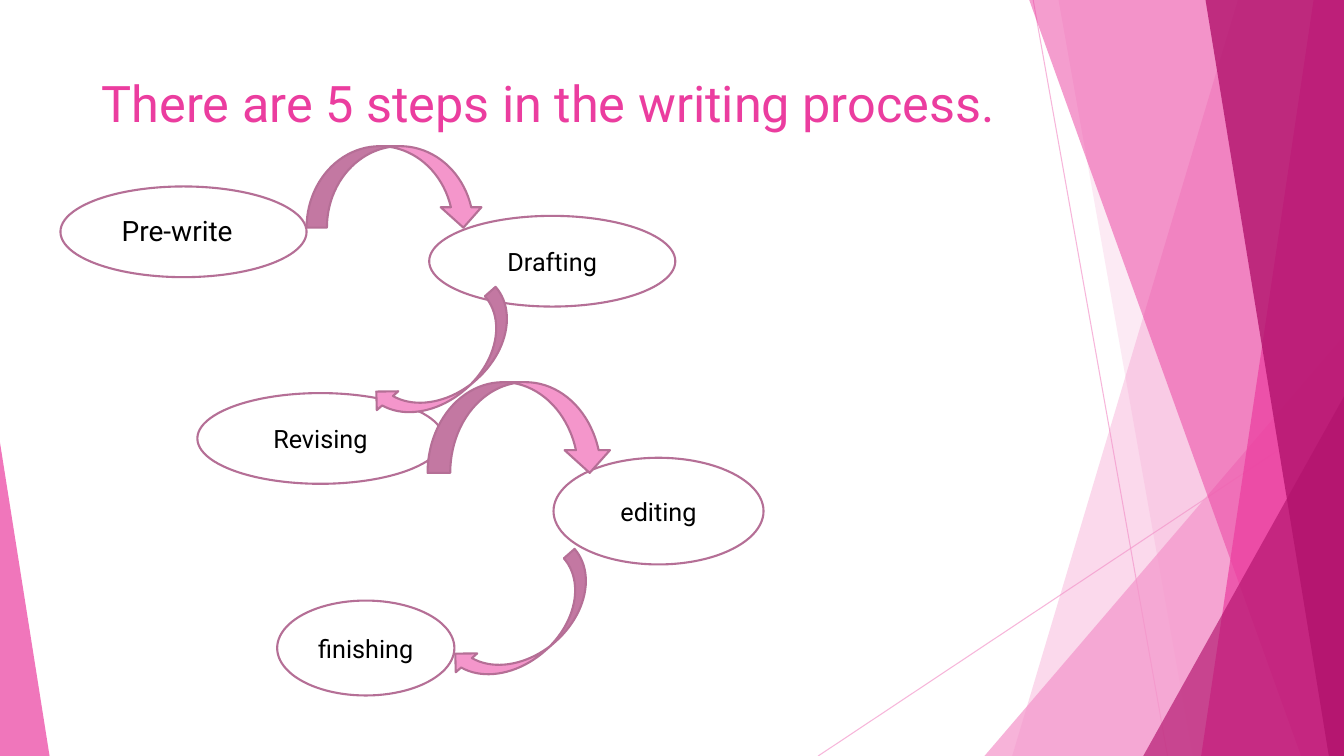
from lxml import etree
from pptx import Presentation
from pptx.dml.color import RGBColor
from pptx.enum.shapes import MSO_CONNECTOR, MSO_SHAPE
from pptx.enum.text import MSO_ANCHOR, PP_ALIGN
from pptx.oxml.ns import qn
from pptx.util import Inches, Pt

COLS, ROWS = 160, 90
CELL = Inches(1) // 12

LIGHT = RGBColor(0xF4, 0x96, 0xCB)
PINK = RGBColor(0xEB, 0x3D, 0x9F)
DARK = RGBColor(0xB2, 0x13, 0x6D)
EDGE = RGBColor(0xB5, 0x6F, 0x96)
WHITE = RGBColor(0xFF, 0xFF, 0xFF)
BLACK = RGBColor(0, 0, 0)

FONT = "Roboto"
OVAL = MSO_SHAPE.OVAL
ARROW = MSO_SHAPE.CURVED_DOWN_ARROW
WEDGE = MSO_SHAPE.ISOSCELES_TRIANGLE
STRAIGHT = MSO_CONNECTOR.STRAIGHT
CENTER, LEFT = PP_ALIGN.CENTER, PP_ALIGN.LEFT
MIDDLE, TOP = MSO_ANCHOR.MIDDLE, MSO_ANCHOR.TOP


def grid(*cells):
    """Turn columns and rows into slide lengths."""
    return [round(cell * CELL) for cell in cells]


def fade(shape, share):
    """Set the opacity, in percent, of the shape's colour."""
    for color in shape._element.spPr.iter(qn("a:srgbClr")):
        etree.SubElement(color, qn("a:alpha"), val=str(share * 1000))


def tint(shape, color, share):
    """Give a backdrop piece a see-through fill and no line."""
    shape.shadow.inherit = False
    shape.fill.solid()
    shape.fill.fore_color.rgb = color
    shape.line.fill.background()
    fade(shape, share)


def add_ray(slide, *ends):
    ray = slide.shapes.add_connector(STRAIGHT, *grid(*ends))
    ray.line.color.rgb = LIGHT
    ray.line.width = Pt(0.75)
    fade(ray, 70)
    etree.SubElement(ray._element.spPr, qn("a:effectLst"))


def add_band(slide, top, foot, color, share):
    """Fill from a slanted edge to the right side of the slide."""
    pen = slide.shapes.build_freeform(*grid(top, -0.1), scale=1.0)
    corners = [(COLS, -0.1), (COLS, ROWS), (foot, ROWS)]
    pen.add_line_segments([grid(*spot) for spot in corners], close=True)
    tint(pen.convert_to_shape(), color, share)


def add_wedge(slide, left, top, width, peak, color, share):
    """Stand a triangle on the foot of the slide."""
    wedge = slide.shapes.add_shape(WEDGE, *grid(left, top, width, ROWS - top))
    wedge.adjustments[0] = peak
    tint(wedge, color, share)


def write(shape, text, size, color, align, anchor):
    frame = shape.text_frame
    frame.text = text
    frame.word_wrap = True
    frame.vertical_anchor = anchor
    line = frame.paragraphs[0]
    line.alignment = align
    font = line.runs[0].font
    font.name, font.size = FONT, Pt(size)
    font.color.rgb = color


def add_text(slide, box, text, size, color, align):
    write(slide.shapes.add_textbox(*grid(*box)), text, size, color, align, TOP)


def add_part(slide, kind, box, color):
    part = slide.shapes.add_shape(kind, *grid(*box))
    part.shadow.inherit = False
    part.fill.solid()
    part.fill.fore_color.rgb = color
    part.line.color.rgb = EDGE
    part.line.width = Pt(1.5)
    return part


def add_step(slide, left, top, width=29.3, height=10.8, text=""):
    oval = add_part(slide, OVAL, (left, top, width, height), WHITE)
    if text:
        write(oval, text, 18, BLACK, CENTER, MIDDLE)


def add_arrow(slide, *box):
    add_part(slide, ARROW, box, LIGHT)


def add_return(slide, left, top):
    """Add an arrow that swings back down to the left."""
    arrow = add_part(slide, ARROW, (left, top, 20.6, 6.8), LIGHT)
    arrow.rotation = 138.7


def add_backdrop(slide):
    add_ray(slide, 123, 0, 139, ROWS)
    add_ray(slide, COLS, 48.4, 97.4, ROWS)
    add_band(slide, 147.4, 120.5, LIGHT, 36)
    add_band(slide, 126, 142, LIGHT, 20)
    add_wedge(slide, 117.2, 40, 42.8, 1, LIGHT, 72)
    add_band(slide, 122.5, 154.9, PINK, 50)
    add_band(slide, 156.4, 143, PINK, 70)
    add_band(slide, 143.5, 158.2, DARK, 80)
    add_wedge(slide, 136.1, 47.2, 23.9, 1, DARK, 66)
    add_wedge(slide, 0, 52.7, 5.9, 0, PINK, 70)


def add_steps(slide):
    add_step(slide, 7.2, 22.2)
    add_text(slide, (13.3, 24.8, 17.2, 5.3), "Pre-write", 20, BLACK, LEFT)
    add_arrow(slide, 36.5, 17.4, 21.1, 9.7)
    add_step(slide, 51.1, 25.7, text="Drafting")
    add_step(slide, 23.5, 46.8, text="Revising")
    add_return(slide, 43.2, 40.1)
    add_step(slide, 65.9, 54.5, 25, 12.7, "editing")
    add_arrow(slide, 50.9, 45.5, 22, 10.8)
    add_return(slide, 52.6, 71.3)
    add_step(slide, 33, 71.5, 21.1, 11.3, "finishing")


def main():
    deck = Presentation()
    deck.slide_width, deck.slide_height = grid(COLS, ROWS)
    slide = deck.slides.add_slide(deck.slide_layouts[6])
    add_backdrop(slide)
    add_text(slide, (8.9, 8, 112.8, 17.3),
             "There are 5 steps in the writing process.", 36, PINK, CENTER)
    add_steps(slide)
    deck.save("out.pptx")


if __name__ == "__main__":
    main()
